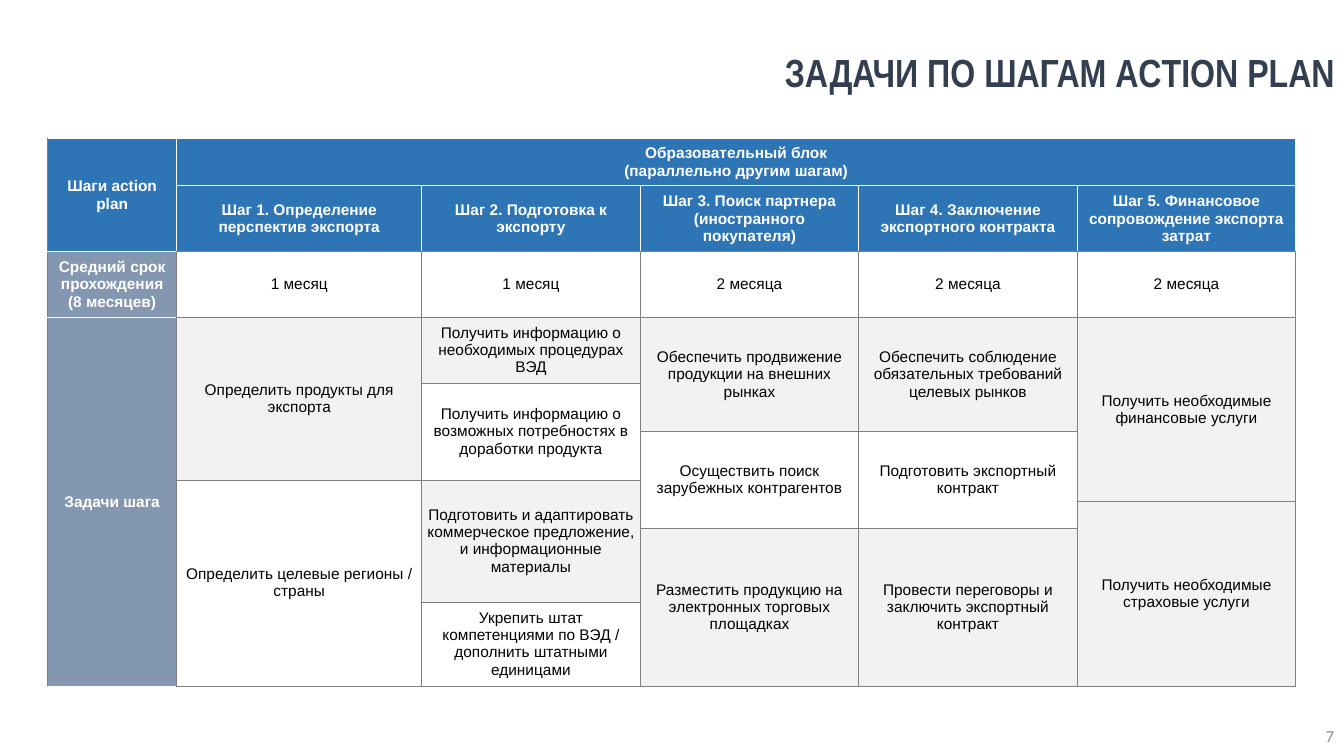
from lxml.etree import SubElement
from pptx import Presentation
from pptx.dml.color import RGBColor
from pptx.enum.text import MSO_ANCHOR as Anchor, PP_ALIGN as Align
from pptx.oxml.ns import qn
from pptx.util import Pt

BLUE = RGBColor(0x2E, 0x75, 0xB6)
SLATE = RGBColor(0x84, 0x97, 0xB0)
LIGHT = RGBColor(0xF2, 0xF2, 0xF2)
WHITE = RGBColor(0xFF, 0xFF, 0xFF)
BLACK = RGBColor(0, 0, 0)
GRAY = RGBColor(0x80, 0x80, 0x80)
NAVY = RGBColor(0x33, 0x3F, 0x50)
NUMBER_GRAY = RGBColor(0x8C, 0x8C, 0x8C)

COLUMN_WIDTHS = [92.3, 175] + [156.1] * 4
ROW_HEIGHTS = [33.6, 47.2, 46.6, 47, 34.6, 34.6, 15.1, 19.4, 52.6, 60]
FIRST_TASK_ROW = 3

STEPS = [
    ("Шаг 1. Определение перспектив экспорта", "1 месяц", [
        (3, "Определить продукты для экспорта", LIGHT),
        (4, "Определить целевые регионы / страны", WHITE)]),
    ("Шаг 2. Подготовка к экспорту", "1 месяц", [
        (1, "Получить информацию о необходимых процедурах ВЭД", LIGHT),
        (2, "Получить информацию о возможных потребностях в доработки продукта", WHITE),
        (3, "Подготовить и адаптировать коммерческое предложение, и информационные материалы", LIGHT),
        (1, "Укрепить штат компетенциями по ВЭД / дополнить штатными единицами", WHITE)]),
    ("Шаг 3. Поиск партнера (иностранного покупателя)", "2 месяца", [
        (2, "Обеспечить продвижение продукции на внешних рынках", LIGHT),
        (3, "Осуществить поиск зарубежных контрагентов", WHITE),
        (2, "Разместить продукцию на электронных торговых площадках", LIGHT)]),
    ("Шаг 4. Заключение экспортного контракта", "2 месяца", [
        (2, "Обеспечить соблюдение обязательных требований целевых рынков", LIGHT),
        (3, "Подготовить экспортный контракт", WHITE),
        (2, "Провести переговоры и заключить экспортный контракт", LIGHT)]),
    ("Шаг 5. Финансовое сопровождение экспорта затрат", "2 месяца", [
        (4, "Получить необходимые финансовые услуги", LIGHT),
        (3, "Получить необходимые страховые услуги", LIGHT)]),
]


def apply_format(target, values):
    """Set each named attribute of the target."""
    for name, value in values.items():
        setattr(target, name, value)


def write_paragraphs(frame, text, align, font, color, space_after=0):
    """Write each line of the text as a formatted paragraph."""
    for index, line in enumerate(text.split("\n")):
        para = frame.paragraphs[0] if index == 0 else frame.add_paragraph()
        apply_format(para, {"alignment": align, "space_after": Pt(space_after)})
        span = para.add_run()
        span.text = line
        apply_format(span.font, font)
        span.font.color.rgb = color


def add_label(page, bounds, text, font, color):
    """Add a right-aligned text box."""
    box = page.shapes.add_textbox(*map(Pt, bounds))
    apply_format(box.text_frame, {"word_wrap": True, "vertical_anchor": Anchor.MIDDLE})
    write_paragraphs(box.text_frame, text, Align.RIGHT, font, color)


def add_borders(cell, colors):
    """Draw the left, right, top and bottom borders of a cell."""
    properties = cell._tc.get_or_add_tcPr()
    for side, color in zip("LRTB", colors):
        line = SubElement(properties, qn(f"a:ln{side}"), w=str(Pt(0.5)))
        fill = SubElement(line, qn("a:solidFill"))
        SubElement(fill, qn("a:srgbClr"), val=str(color))


def fill_cell(table, row, column, text, fill, rows=1, columns=1,
              heading=True, borders=(GRAY,) * 4):
    """Merge, colour and caption a block of table cells."""
    cell = table.cell(row, column)
    if rows * columns > 1:
        cell.merge(table.cell(row + rows - 1, column + columns - 1))
    for down in range(rows):
        for across in range(columns):
            part = table.cell(row + down, column + across)
            add_borders(part, borders)
            part.fill.solid()
            part.fill.fore_color.rgb = fill
    sides = ("left", "right", "top", "bottom")
    apply_format(cell, {f"margin_{side}": Pt(3.6) for side in sides})
    cell.vertical_anchor = Anchor.MIDDLE
    font = {"name": "Arial", "size": Pt(11), "bold": heading}
    write_paragraphs(cell.text_frame, text, Align.CENTER, font,
                     WHITE if heading else BLACK, 0 if heading else 6)


def add_plan_table(page):
    """Add the table of steps, durations and tasks."""
    frame = page.shapes.add_table(
        len(ROW_HEIGHTS), len(COLUMN_WIDTHS), Pt(34), Pt(99),
        Pt(sum(COLUMN_WIDTHS)), Pt(sum(ROW_HEIGHTS)))
    table = frame.table
    apply_format(table, {"first_row": False, "horz_banding": False})
    for column, width in zip(table.columns, COLUMN_WIDTHS):
        column.width = Pt(width)
    for row, height in zip(table.rows, ROW_HEIGHTS):
        row.height = Pt(height)

    side_borders = (GRAY, GRAY, WHITE, WHITE)
    fill_cell(table, 0, 0, "Шаги action plan", BLUE, rows=2,
              borders=(GRAY, WHITE, WHITE, WHITE))
    fill_cell(table, 0, 1, "Образовательный блок\n(параллельно другим шагам)", BLUE,
              columns=len(STEPS), borders=(WHITE,) * 4)
    fill_cell(table, 2, 0, "Средний срок прохождения\n(8 месяцев)", SLATE,
              borders=side_borders)
    fill_cell(table, FIRST_TASK_ROW, 0, "Задачи шага", SLATE,
              rows=len(ROW_HEIGHTS) - FIRST_TASK_ROW, borders=side_borders)
    for column, (step, duration, tasks) in enumerate(STEPS, 1):
        fill_cell(table, 1, column, step, BLUE, borders=(WHITE, WHITE, WHITE, GRAY))
        fill_cell(table, 2, column, duration, WHITE, heading=False)
        row = FIRST_TASK_ROW
        for rows, task, fill in tasks:
            fill_cell(table, row, column, task, fill, rows=rows, heading=False)
            row += rows


def main():
    """Build the slide and save the deck."""
    deck = Presentation()
    apply_format(deck, {"slide_width": Pt(960), "slide_height": Pt(540)})
    page = deck.slides.add_slide(deck.slide_layouts[6])
    add_label(page, (253.4, 32, 707, 38), "ЗАДАЧИ ПО ШАГАМ ACTION PLAN",
              {"name": "Arial Narrow", "size": Pt(28), "bold": True}, NAVY)
    add_plan_table(page)
    add_label(page, (744, 511.2, 216, 28.8), "7",
              {"name": "Calibri", "size": Pt(12)}, NUMBER_GRAY)
    deck.save("out.pptx")


if __name__ == "__main__":
    main()
